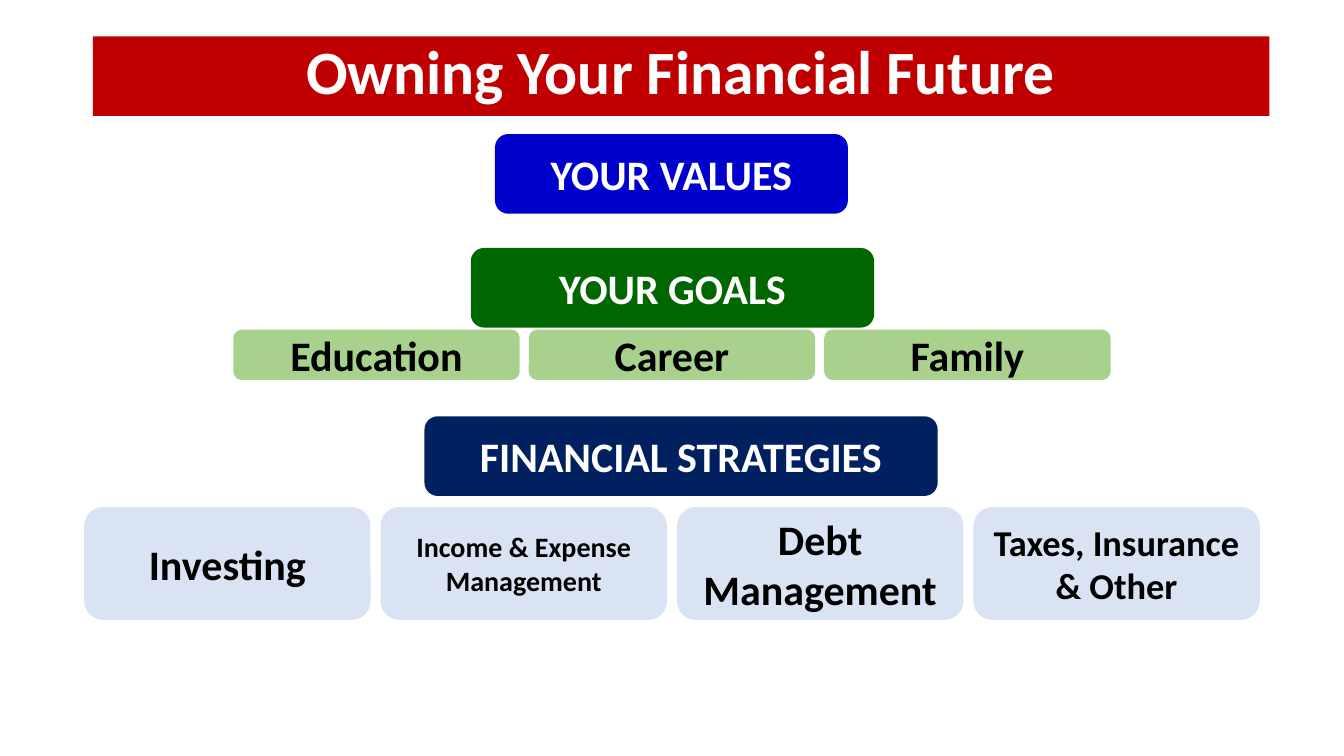
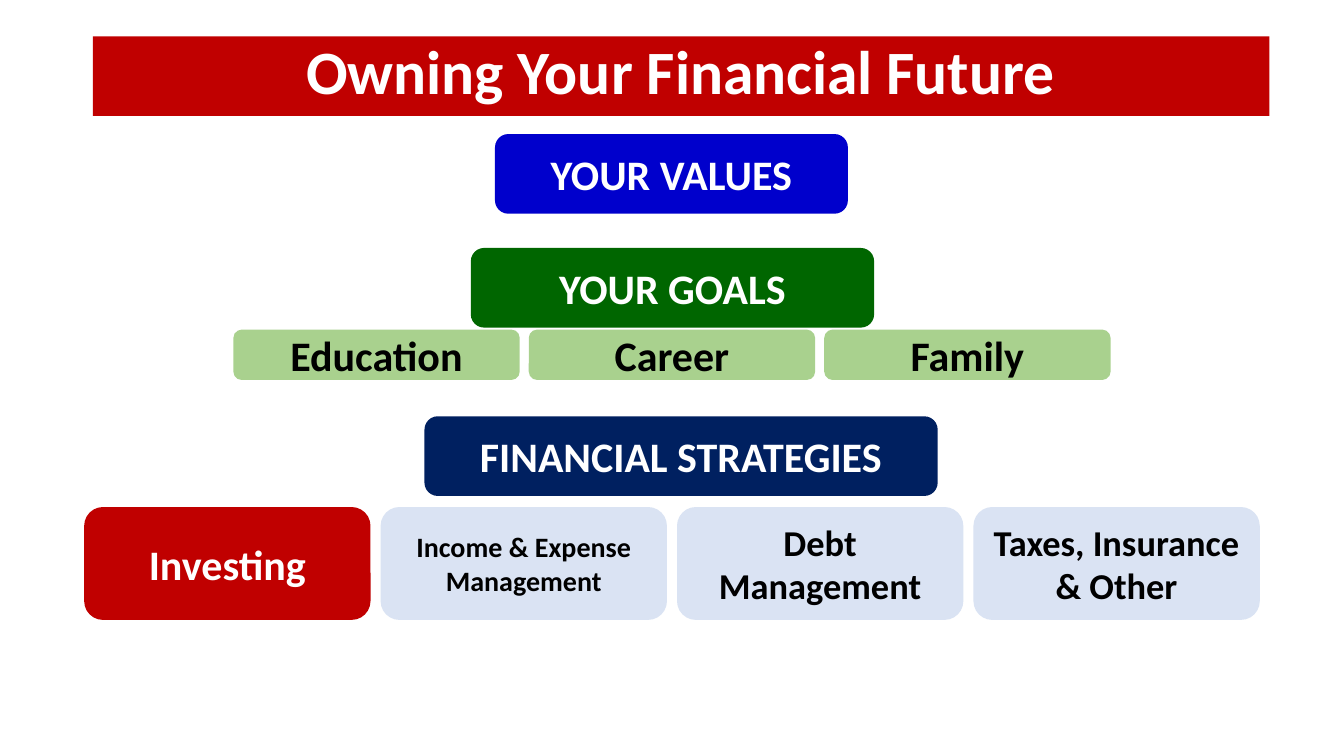
from dataclasses import dataclass

from pptx import Presentation
from pptx.dml.color import RGBColor
from pptx.enum.shapes import MSO_SHAPE as Shape
from pptx.enum.text import MSO_ANCHOR as Anchor, MSO_AUTO_SIZE as AutoSize, PP_ALIGN as Align
from pptx.util import Inches, Pt


@dataclass(frozen=True)
class Theme:
    font: str = "Calibri"
    red: str = "C00000"
    blue: str = "0000CC"
    green: str = "006600"
    light_green: str = "A9D18E"
    navy: str = "002060"
    light_blue: str = "DAE3F3"
    white: str = "FFFFFF"
    black: str = "000000"
    title_size: int = 44
    large: int = 30
    medium: int = 26
    small: int = 20


THEME = Theme()

# Content
TITLE = "Owning Your Financial Future"
HEADINGS = [  # text, left, top, width, fill
    ("YOUR VALUES", 4.91, 1.33, 3.5, THEME.blue),
    ("YOUR GOALS", 4.67, 2.46, 4, THEME.green),
    ("FINANCIAL STRATEGIES", 4.21, 4.13, 5.09, THEME.navy),
]
GOALS = [(goal, THEME.large) for goal in ("Education", "Career", "Family")]
SLIDES = [  # size of the debt card, highlighted strategy
    (THEME.large, None),
    (THEME.medium, "Investing"),
]


def strategies(debt_size):
    return [
        ("Investing", THEME.large),
        ("Income & Expense Management", THEME.small),
        ("Debt Management", debt_size),
        ("Taxes, Insurance & Other", THEME.medium),
    ]


# Geometry in inches
SLIDE_WIDTH, SLIDE_HEIGHT = 13.33, 7.5
TITLE_BOX = (0.92, 0.36, 11.67, 0.79)
HEADING_HEIGHT = 0.79
CARD_WIDTH = 2.84
GOAL_ROW = dict(top=3.27, height=0.5, gap=0.09)
STRATEGY_ROW = dict(top=5.03, height=1.12, gap=0.1)


def set_fill(shape, color):
    shape.fill.solid()
    shape.fill.fore_color.rgb = RGBColor.from_string(color)


def write_text(shape, text, size=THEME.large, color=THEME.white,
               anchor=Anchor.MIDDLE, line_spacing=None):
    frame = shape.text_frame
    frame.text = text
    frame.word_wrap = True
    frame.auto_size = AutoSize.NONE
    frame.vertical_anchor = anchor
    paragraph = frame.paragraphs[0]
    paragraph.alignment = Align.CENTER
    paragraph.line_spacing = line_spacing
    font = paragraph.runs[0].font
    font.name, font.size, font.bold = THEME.font, Pt(size), True
    font.color.rgb = RGBColor.from_string(color)


def add_title(slide):
    title = slide.shapes.title
    title.left, title.top, title.width, title.height = map(Inches, TITLE_BOX)
    set_fill(title, THEME.red)
    write_text(title, TITLE, size=THEME.title_size, anchor=Anchor.TOP, line_spacing=0.9)


def add_card(slide, text, box, fill, **text_format):
    card = slide.shapes.add_shape(Shape.ROUNDED_RECTANGLE, *map(Inches, box))
    card.shadow.inherit = False
    card.line.fill.background()
    set_fill(card, fill)
    write_text(card, text, **text_format)


def add_row(slide, cards, top, height, gap, fill, highlight=None):
    """Place equal cards in a row centred on the slide."""
    pitch = CARD_WIDTH + gap
    left = (SLIDE_WIDTH - len(cards) * pitch + gap) / 2
    for index, (text, size) in enumerate(cards):
        chosen = text == highlight
        add_card(slide, text, (left + index * pitch, top, CARD_WIDTH, height),
                 THEME.red if chosen else fill, size=size,
                 color=THEME.white if chosen else THEME.black)


def add_strategy_slide(presentation, debt_size, highlight):
    slide = presentation.slides.add_slide(presentation.slide_layouts.get_by_name("Title Only"))
    add_title(slide)
    for text, left, top, width, fill in HEADINGS:
        add_card(slide, text, (left, top, width, HEADING_HEIGHT), fill)
    add_row(slide, GOALS, fill=THEME.light_green, **GOAL_ROW)
    add_row(slide, strategies(debt_size), fill=THEME.light_blue,
            highlight=highlight, **STRATEGY_ROW)


def main():
    presentation = Presentation()
    presentation.slide_width = Inches(SLIDE_WIDTH)
    presentation.slide_height = Inches(SLIDE_HEIGHT)
    for debt_size, highlight in SLIDES:
        add_strategy_slide(presentation, debt_size, highlight)
    presentation.save("out.pptx")


if __name__ == "__main__":
    main()
